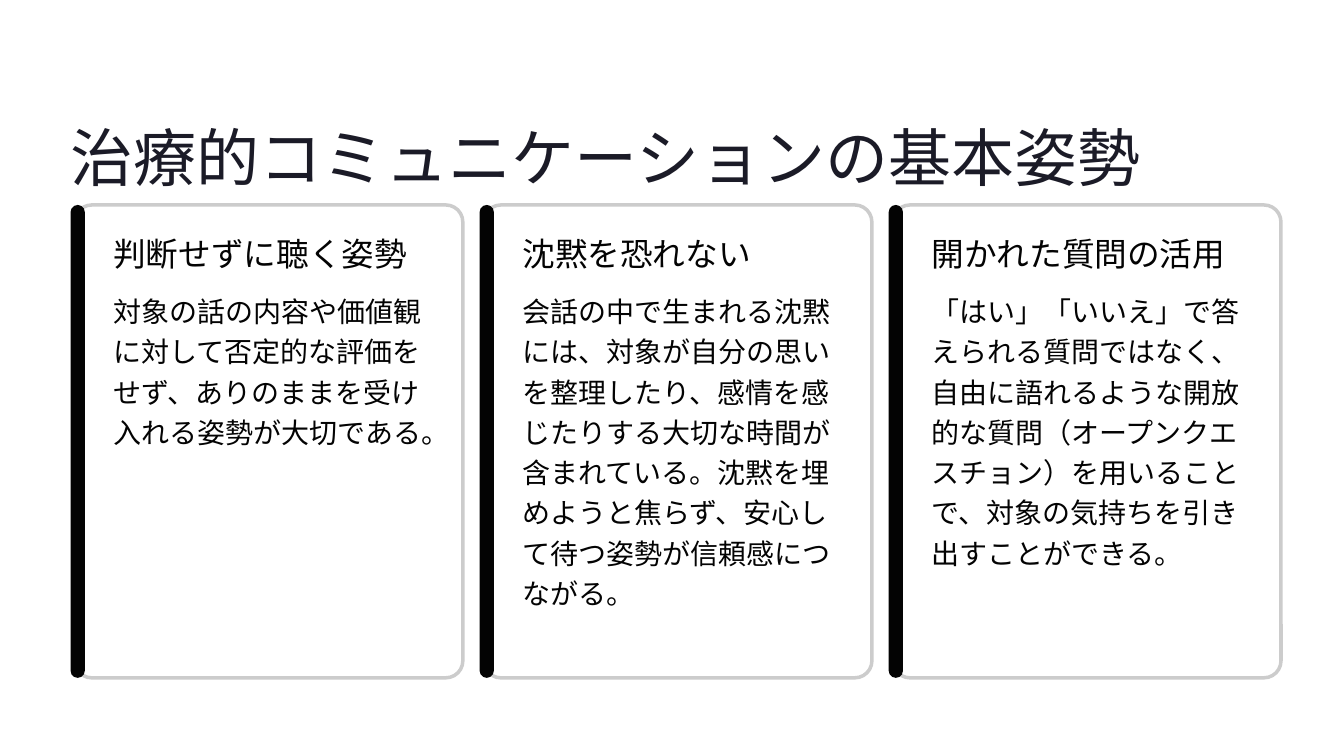
from lxml.etree import SubElement
from pptx import Presentation
from pptx.dml.color import RGBColor
from pptx.enum.shapes import MSO_SHAPE as Shape
from pptx.oxml.ns import qn
from pptx.util import Inches, Pt

WHITE = RGBColor(0xFF, 0xFF, 0xFF)
BLACK = RGBColor(0x03, 0x03, 0x03)
NAVY = RGBColor(0x1B, 0x1B, 0x27)
GRAY = RGBColor(0xCC, 0xCC, 0xCC)

LEFT = 0.84
TOP = 2.44
PITCH = 4.87
CARD_HEIGHT = 5.63

CARDS = [
    ("判断せずに聴く姿勢",
     "対象の話の内容や価値観に対して否定的な評価をせず、ありのままを受け入れる姿勢が大切である。"),
    ("沈黙を恐れない",
     "会話の中で生まれる沈黙には、対象が自分の思いを整理したり、感情を感じたりする大切な時間が含まれている。"
     "沈黙を埋めようと焦らず、安心して待つ姿勢が信頼感につながる。"),
    ("開かれた質問の活用",
     "「はい」「いいえ」で答えられる質問ではなく、自由に語れるような開放的な質問（オープンクエスチョン）を"
     "用いることで、対象の気持ちを引き出すことができる。"),
]


def add_text(page, text, left, top, width, height, font, size, spacing, color=BLACK, wrap=False):
    box = page.shapes.add_textbox(Inches(left), Inches(top), Inches(width), Inches(height))
    frame = box.text_frame
    frame.word_wrap = wrap
    frame.margin_left = frame.margin_right = frame.margin_top = frame.margin_bottom = 0
    para = frame.paragraphs[0]
    para.text = text
    para.line_spacing = Pt(spacing)
    para.font.name = font
    para.font.size = Pt(size)
    para.font.color.rgb = color


def add_round_box(page, left, width, rounding, color):
    box = page.shapes.add_shape(
        Shape.ROUNDED_RECTANGLE, Inches(left), Inches(TOP), Inches(width), Inches(CARD_HEIGHT))
    box.adjustments[0] = rounding
    box.shadow.inherit = False
    box.fill.solid()
    box.fill.fore_color.rgb = color
    box.line.fill.background()
    return box


def set_opacity(shape, percent):
    color = shape.fill._xPr.find(qn("a:solidFill"))[0]
    SubElement(color, qn("a:alpha"), val=str(percent * 1000))


def add_card(page, left, heading, body):
    panel = add_round_box(page, left + 0.05, 4.62, 0.044, WHITE)
    set_opacity(panel, 95)
    panel.line.color.rgb = GRAY
    panel.line.width = Pt(3)
    add_round_box(page, left, 0.17, 0.5, BLACK)
    add_text(page, heading, left + 0.51, 2.78, 3.8, 0.56, "Inter", 28, 33.5)
    add_text(page, body, left + 0.51, 3.43, 3.8, 4.04, "Cabin", 24, 34.5, wrap=True)


def main():
    deck = Presentation()
    deck.slide_width = Inches(16)
    deck.slide_height = Inches(9)
    page = deck.slides.add_slide(deck.slide_layouts[6])
    add_text(page, "治療的コミュニケーションの基本姿勢", LEFT, 1.37, 12.79, 0.94, "Inter", 54, 67.5, NAVY)
    for index, (heading, body) in enumerate(CARDS):
        add_card(page, LEFT + index * PITCH, heading, body)
    deck.save("out.pptx")


if __name__ == "__main__":
    main()
